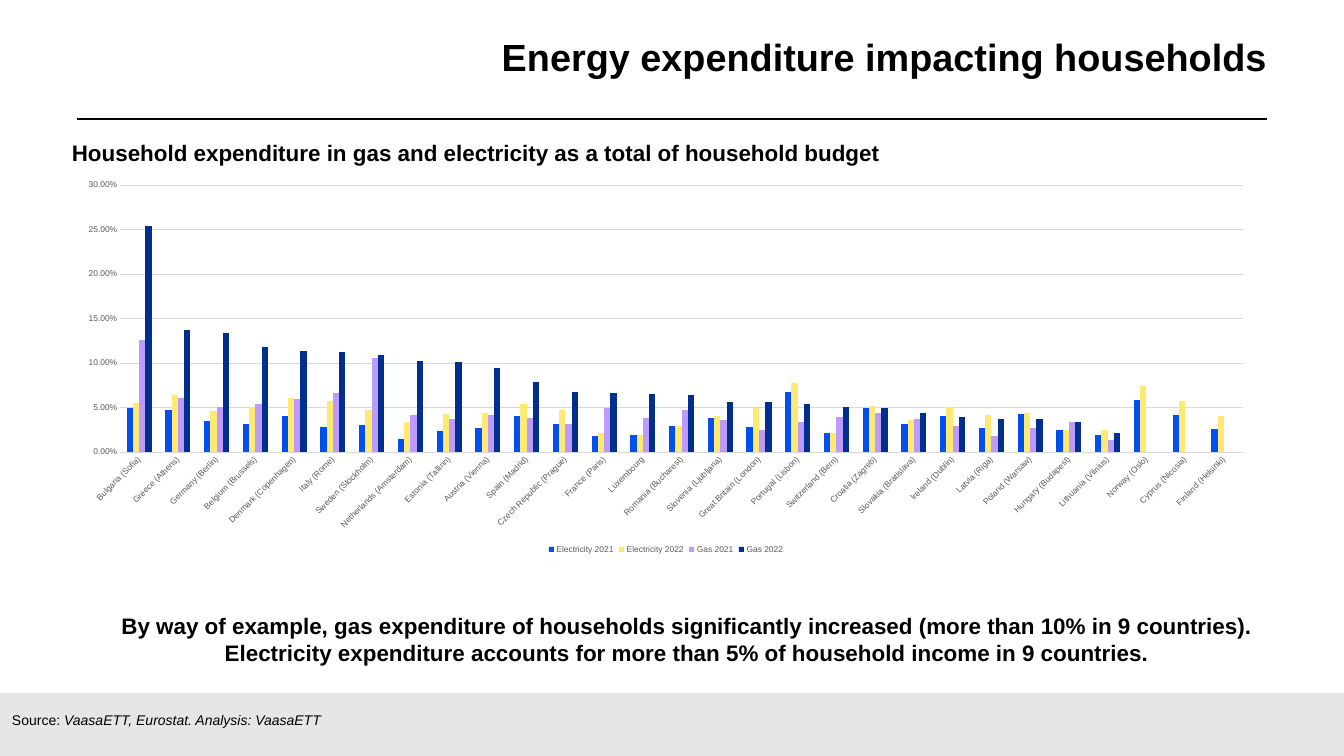
from lxml import etree
from pptx import Presentation
from pptx.chart.data import CategoryChartData
from pptx.dml.color import RGBColor
from pptx.enum.chart import XL_CHART_TYPE as ChartType, XL_LEGEND_POSITION as LegendPos, XL_TICK_MARK as Tick
from pptx.enum.shapes import MSO_CONNECTOR as Connector, MSO_SHAPE as Shape
from pptx.enum.text import MSO_ANCHOR as Anchor, PP_ALIGN as Align
from pptx.oxml.ns import qn
from pptx.util import Inches, Pt

COLORS = {
    "black": "000000", "band": "E6E6E6", "label": "595959", "grid": "D9D9D9",
    "Electricity 2021": "004FEE", "Electricity 2022": "FEEA70",
    "Gas 2021": "BC9BFD", "Gas 2022": "002F8F",
}
SERIES = ["Electricity 2021", "Electricity 2022", "Gas 2021", "Gas 2022"]
# Shares of the household budget in percent, in the order of SERIES
BUDGET_SHARES = [
    ("Bulgaria (Sofia)", 5.0, 5.5, 12.6, 25.4),
    ("Greece (Athens)", 4.7, 6.4, 6.1, 13.7),
    ("Germany (Berlin)", 3.5, 4.6, 5.1, 13.4),
    ("Belgium (Brussels)", 3.1, 5.1, 5.4, 11.8),
    ("Denmark (Copenhagen)", 4.1, 6.1, 6.0, 11.3),
    ("Italy (Rome)", 2.8, 5.7, 6.6, 11.2),
    ("Sweden (Stockholm)", 3.0, 4.7, 10.6, 10.9),
    ("Netherlands (Amsterdam)", 1.5, 3.4, 4.2, 10.2),
    ("Estonia (Tallinn)", 2.4, 4.3, 3.7, 10.1),
    ("Austria (Vienna)", 2.7, 4.4, 4.2, 9.4),
    ("Spain (Madrid)", 4.1, 5.4, 3.8, 7.9),
    ("Czech Republic (Prague)", 3.1, 4.7, 3.2, 6.8),
    ("France (Paris)", 1.8, 2.1, 4.9, 6.6),
    ("Luxembourg", 1.9, 1.9, 3.8, 6.5),
    ("Romania (Bucharest)", 2.9, 2.9, 4.7, 6.4),
    ("Slovenia (Ljubljana)", 3.8, 4.0, 3.6, 5.6),
    ("Great Britain (London)", 2.8, 5.0, 2.5, 5.6),
    ("Portugal (Lisbon)", 6.8, 7.7, 3.4, 5.4),
    ("Switzerland (Bern)", 2.1, 2.1, 3.9, 5.1),
    ("Croatia (Zagreb)", 5.0, 5.2, 4.4, 4.9),
    ("Slovakia (Bratislava)", 3.2, 3.6, 3.7, 4.4),
    ("Ireland (Dublin)", 4.1, 5.1, 2.9, 3.9),
    ("Latvia (Riga)", 2.7, 4.2, 1.8, 3.7),
    ("Poland (Warsaw)", 4.3, 4.4, 2.7, 3.7),
    ("Hungary (Budapest)", 2.5, 2.5, 3.4, 3.4),
    ("Lithuania (Vilnius)", 1.9, 2.5, 1.3, 2.1),
    ("Norway (Oslo)", 5.9, 7.4, None, None),
    ("Cyprus (Nicosia)", 4.2, 5.7, None, None),
    ("Finland (Helsinki)", 2.6, 4.1, None, None),
]


def rgb(name):
    return RGBColor.from_string(COLORS[name])


def add_text(box, runs, size, bold=False, align=Align.LEFT, spacing=None,
             insets=(0.1, 0.05), wrap=True, anchor=Anchor.TOP):
    """Add a one-paragraph text box; runs are (text, italic) pairs, insets (side, top and bottom)."""
    frame = slide.shapes.add_textbox(*map(Inches, box)).text_frame
    frame.word_wrap = wrap
    frame.vertical_anchor = anchor
    frame.margin_left = frame.margin_right = Inches(insets[0])
    frame.margin_top = frame.margin_bottom = Inches(insets[1])
    paragraph = frame.paragraphs[0]
    paragraph.alignment = align
    paragraph.line_spacing = spacing
    for text, italic in runs:
        run = paragraph.add_run()
        run.text = text
        run.font.name, run.font.size = "Arial", Pt(size)
        run.font.bold, run.font.italic = bold, italic
        run.font.color.rgb = rgb("black")


prs = Presentation()
prs.slide_width, prs.slide_height = Inches(20), Inches(11.25)
slide = prs.slides.add_slide(prs.slide_layouts[6])

# Footer band and title rule
footer = slide.shapes.add_shape(Shape.RECTANGLE, Inches(0), Inches(10.31), Inches(20), Inches(0.94))
footer.shadow.inherit = False
footer.fill.solid()
footer.fill.fore_color.rgb = rgb("band")
footer.line.fill.background()

rule = slide.shapes.add_connector(Connector.STRAIGHT, Inches(1.14), Inches(1.77), Inches(18.86), Inches(1.77))
rule.line.color.rgb = rgb("black")
rule.line.width = Pt(1.5)
etree.SubElement(rule._element.spPr, qn("a:effectLst"))

# Texts
add_text((4.56, 0, 14.3, 1.77), [("Energy expenditure impacting households", False)], 40.5,
         bold=True, align=Align.RIGHT, spacing=0.9, insets=(0, 0.2), anchor=Anchor.MIDDLE)
add_text((0.08, 10.54, 4.85, 0.35),
         [("Source: ", False), ("VaasaETT, Eurostat. Analysis: VaasaETT", True)], 15, wrap=False)
add_text((1.17, 9.04, 18.09, 1.26),
         [("By way of example, gas expenditure of households significantly increased "
           "(more than 10% in 9 countries). Electricity expenditure accounts for more than 5% "
           "of household income in 9 countries.", False)],
         24, bold=True, align=Align.CENTER, insets=(0.15, 0.07))
add_text((0.97, 1.94, 18.24, 0.54),
         [("Household expenditure in gas and electricity as a total of household budget", False)],
         24, bold=True, spacing=1.2)

# Chart
budget = CategoryChartData(number_format="0.00%")
countries, *columns = zip(*BUDGET_SHARES)
budget.categories = countries
for name, column in zip(SERIES, columns):
    budget.add_series(name, [None if share is None else round(share / 100, 3) for share in column])
chart = slide.shapes.add_chart(ChartType.COLUMN_CLUSTERED, Inches(0.96), Inches(2.57),
                               Inches(17.9), Inches(5.72), budget).chart
chart.has_title = False
chart.font.name, chart.font.size = "Arial", Pt(10)
chart.font.color.rgb = rgb("black")

bars = chart.plots[0]
bars.gap_width, bars.overlap, bars.vary_by_categories = 219, 0, False
for series in bars.series:
    series.format.fill.solid()
    series.format.fill.fore_color.rgb = rgb(series.name)

chart.has_legend = True
chart.legend.position = LegendPos.BOTTOM
chart.legend.include_in_layout = False
country_axis, share_axis = chart.category_axis, chart.value_axis
for font in (country_axis.tick_labels.font, share_axis.tick_labels.font, chart.legend.font):
    font.name, font.size = "Arial", Pt(9)
    font.color.rgb = rgb("label")
for axis in (country_axis, share_axis):
    axis.major_tick_mark = axis.minor_tick_mark = Tick.NONE

share_axis.minimum_scale, share_axis.maximum_scale, share_axis.major_unit = 0, 0.3, 0.05
share_axis.tick_labels.number_format = "0.00%"
share_axis.tick_labels.number_format_is_linked = False
share_axis.format.line.fill.background()
share_axis.has_major_gridlines = True
for line in (country_axis.format.line, share_axis.major_gridlines.format.line):
    line.color.rgb = rgb("grid")
    line.width = Pt(0.75)

# Slanted country names
country_axis._element.find(".//" + qn("a:bodyPr")).set("rot", "-2700000")

# Fixed plot area, as fractions of the chart
plot_area = chart._chartSpace.find(".//" + qn("c:plotArea"))
for old_layout in plot_area.findall(qn("c:layout")):
    plot_area.remove(old_layout)
layout = etree.Element(qn("c:layout"))
manual = etree.SubElement(layout, qn("c:manualLayout"))
for tag, value in [("layoutTarget", "inner"), ("xMode", "edge"), ("yMode", "edge"),
                   ("x", "0.046"), ("y", "0.032"), ("w", "0.934"), ("h", "0.695")]:
    etree.SubElement(manual, qn("c:" + tag)).set("val", value)
plot_area.insert(0, layout)

prs.save("out.pptx")
